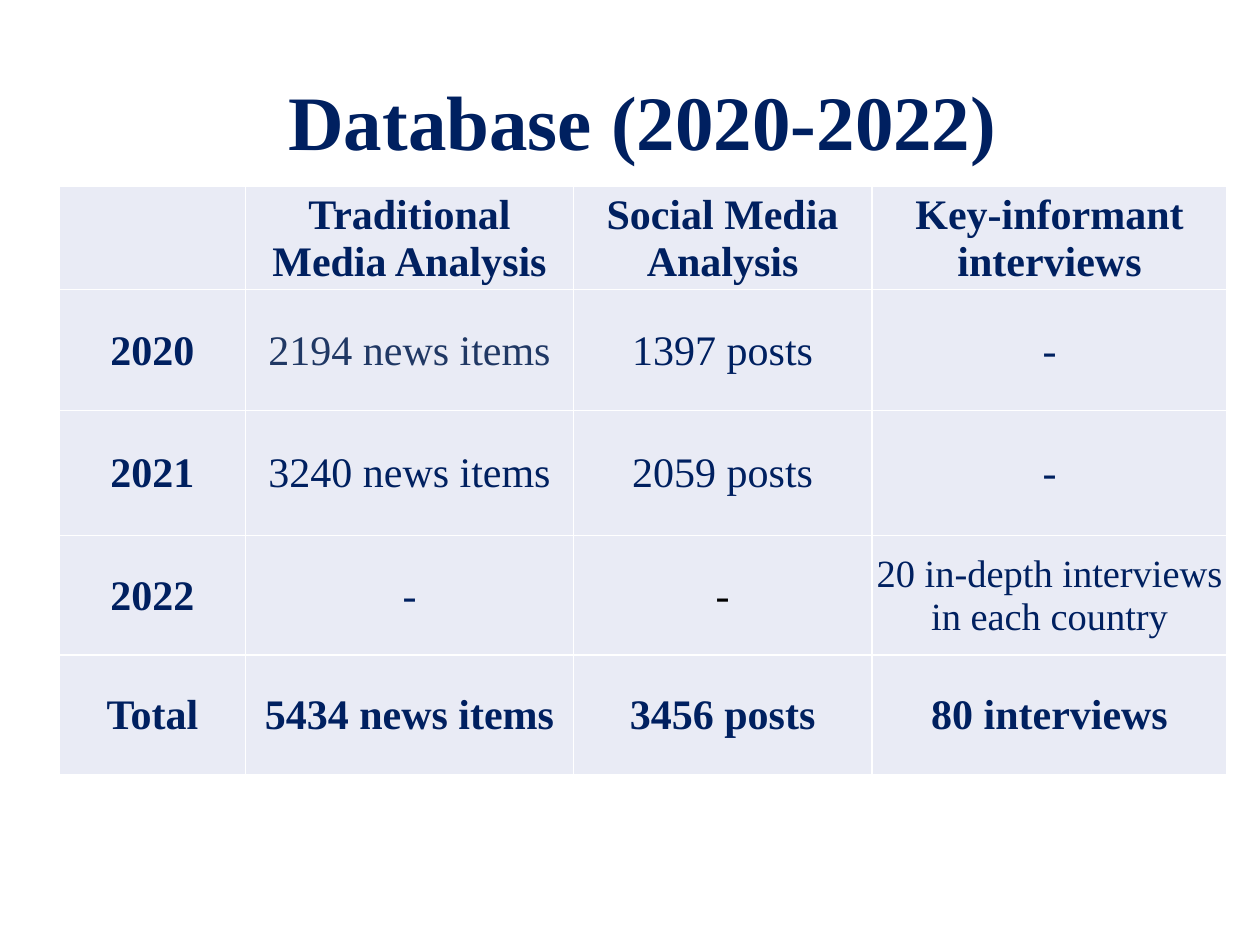
"""Build the database overview slide with its table of yearly counts."""
from dataclasses import dataclass

from lxml.etree import SubElement
from pptx import Presentation
from pptx.dml.color import RGBColor
from pptx.enum.text import MSO_ANCHOR, PP_ALIGN
from pptx.oxml.ns import qn
from pptx.util import Inches, Pt


@dataclass(frozen=True)
class Theme:
    font: str = "Times New Roman"
    navy: str = "002060"
    slate: str = "203864"
    black: str = "000000"
    cell_fill: str = "E9EBF5"
    border: str = "FFFFFF"
    border_width: int = 1
    title_size: int = 44
    body_size: int = 24
    small_size: int = 22


COLUMN_WIDTHS = [1.48, 2.6, 2.37, 2.82]
ROW_HEIGHTS = [0.82, 0.96, 0.99, 0.95, 0.95]
ROWS = [
    ["", "Traditional Media Analysis", "Social Media Analysis", "Key-informant interviews"],
    ["2020", "2194 news items", "1397 posts", "-"],
    ["2021", "3240 news items", "2059 posts", "-"],
    ["2022", "-", "-", "20 in-depth interviews in each country"],
    ["Total", "5434 news items", "3456 posts", "80 interviews"],
]
THEME = Theme()
CELL_OVERRIDES = {
    (1, 1): {"color": THEME.slate},
    (3, 2): {"color": THEME.black},
    (3, 3): {"size": THEME.small_size},
}


class SlideBuilder:
    def __init__(self, slide, theme):
        self.slide = slide
        self.theme = theme

    def style_text(self, text_frame, size=None, color=None, bold=False):
        for paragraph in text_frame.paragraphs:
            paragraph.alignment = PP_ALIGN.CENTER
            for run in paragraph.runs:
                run.font.name = self.theme.font
                run.font.size = Pt(size or self.theme.body_size)
                run.font.bold = bold
                run.font.color.rgb = RGBColor.from_string(color or self.theme.navy)

    def add_title(self, text, left, top, width, height):
        shape = self.slide.shapes.add_textbox(
            Inches(left), Inches(top), Inches(width), Inches(height))
        text_frame = shape.text_frame
        text_frame.word_wrap = True
        text_frame.vertical_anchor = MSO_ANCHOR.MIDDLE
        text_frame.text = text
        text_frame.paragraphs[0].line_spacing = 0.9
        self.style_text(text_frame, size=self.theme.title_size, bold=True)

    def add_borders(self, cell):
        properties = cell._tc.get_or_add_tcPr()
        for position, side in enumerate(("a:lnL", "a:lnR", "a:lnT", "a:lnB")):
            line = SubElement(properties, qn(side), w=str(Pt(self.theme.border_width)))
            fill = SubElement(line, qn("a:solidFill"))
            SubElement(fill, qn("a:srgbClr"), val=self.theme.border)
            properties.insert(position, line)

    def add_table(self, rows, left, top, widths, heights, overrides):
        table = self.slide.shapes.add_table(
            len(rows), len(widths), Inches(left), Inches(top),
            Inches(sum(widths)), Inches(sum(heights))).table
        table.first_row = table.horz_banding = False
        for column, width in zip(table.columns, widths):
            column.width = Inches(width)
        for row, height in zip(table.rows, heights):
            row.height = Inches(height)
        for row_index, texts in enumerate(rows):
            for column_index, text in enumerate(texts):
                cell = table.cell(row_index, column_index)
                cell.text_frame.text = text
                cell.vertical_anchor = MSO_ANCHOR.MIDDLE
                cell.margin_left = cell.margin_right = cell.margin_top = Inches(0.01)
                cell.margin_bottom = 0
                cell.fill.solid()
                cell.fill.fore_color.rgb = RGBColor.from_string(self.theme.cell_fill)
                self.add_borders(cell)
                bold = row_index in (0, len(rows) - 1) or column_index == 0
                self.style_text(cell.text_frame, bold=bold,
                                **overrides.get((row_index, column_index), {}))


def main():
    presentation = Presentation()
    presentation.slide_width = Inches(10)
    presentation.slide_height = Inches(7.5)
    slide = presentation.slides.add_slide(presentation.slide_layouts[6])
    builder = SlideBuilder(slide, THEME)
    builder.add_title("Database (2020-2022)", 0.79, 0.55, 8.62, 0.89)
    builder.add_table(ROWS, 0.47, 1.48, COLUMN_WIDTHS, ROW_HEIGHTS, CELL_OVERRIDES)
    presentation.save("out.pptx")


if __name__ == "__main__":
    main()
